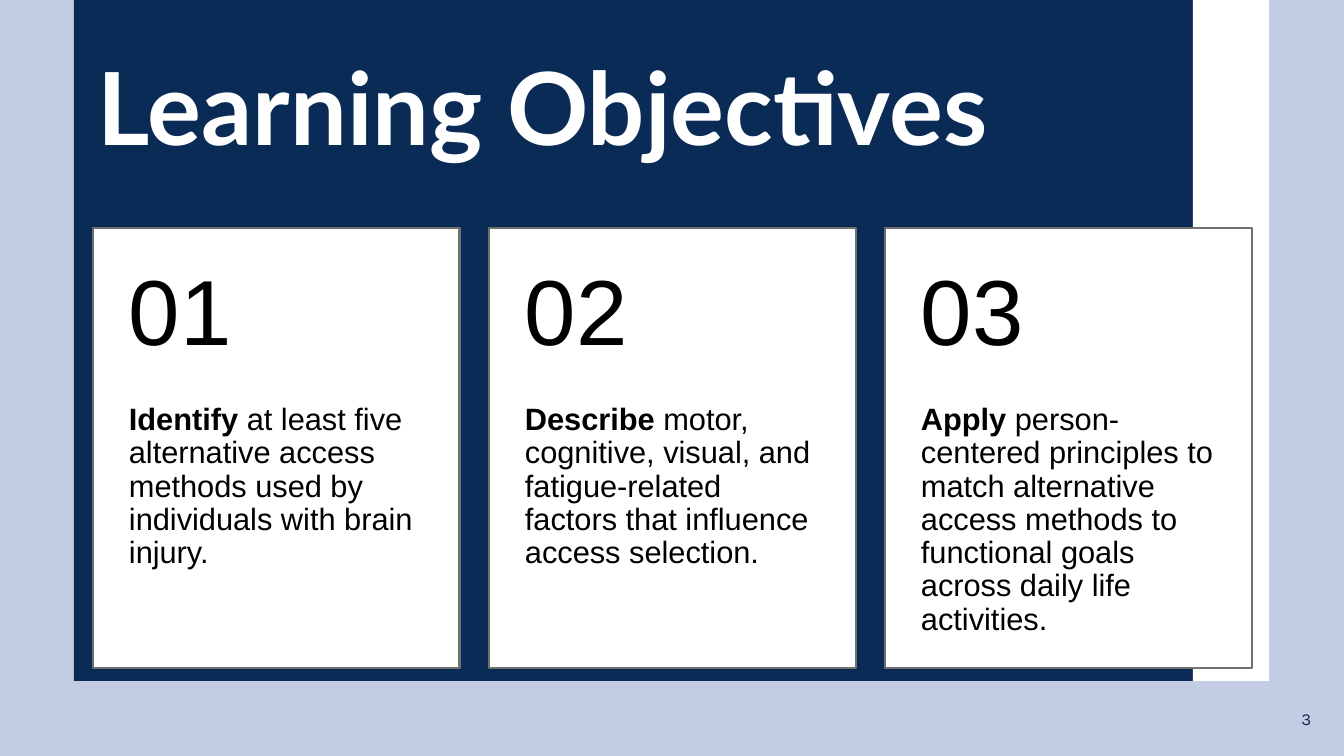
from pptx import Presentation
from pptx.dml.color import RGBColor
from pptx.enum.shapes import MSO_SHAPE as SHAPE
from pptx.enum.text import MSO_ANCHOR as ANCHOR, MSO_AUTO_SIZE as AUTO, PP_ALIGN as ALIGN
from pptx.util import Pt

PX = 914400 / 100.8
COLORS = {"sky": "C2CDE3", "navy": "0B2B57", "white": "FFFFFF", "gray": "707070", "black": "000000"}
CARDS = [
    ("Identify", " at least five alternative access methods used by individuals with brain injury."),
    ("Describe", " motor, cognitive, visual, and fatigue-related factors that influence access selection."),
    ("Apply", " person-centered principles to match alternative access methods to functional goals across daily life activities."),
]
LEFT, TOP, WIDTH, HEIGHT, PITCH = 93, 228, 367, 440, 396
NUMBER_H = 176


def add_rect(shapes, box, color, border=None):
    sp = shapes.add_shape(SHAPE.RECTANGLE, *[round(v * PX) for v in box])
    sp.shadow.inherit = False
    sp.fill.solid()
    sp.fill.fore_color.rgb = RGBColor.from_string(COLORS[color])
    if border:
        sp.line.color.rgb = RGBColor.from_string(COLORS[border])
        sp.line.width = Pt(2)
    else:
        sp.line.fill.background()


def set_text(sp, box, runs, size, font, color, margins, anchor, align=ALIGN.LEFT, spacing=0.9, wrap=True):
    sp.left, sp.top, sp.width, sp.height = [round(v * PX) for v in box]
    tf = sp.text_frame
    frame = {"word_wrap": wrap, "auto_size": AUTO.NONE, "vertical_anchor": anchor}
    for side, margin in zip(("left", "top", "right", "bottom"), margins):
        frame[f"margin_{side}"] = round(margin * PX)
    for name, value in frame.items():
        setattr(tf, name, value)
    p = tf.paragraphs[0]
    p.alignment = align
    p.line_spacing = spacing
    for text, bold in runs:
        r = p.add_run()
        r.text = text
        for name, value in {"size": Pt(size), "name": font, "bold": bold}.items():
            setattr(r.font, name, value)
        r.font.color.rgb = RGBColor.from_string(COLORS[color])


prs = Presentation()
prs.slide_width = round(1344 * PX)
prs.slide_height = round(756 * PX)
s = prs.slides.add_slide(prs.slide_layouts[5])
s.background.fill.solid()
s.background.fill.fore_color.rgb = RGBColor.from_string(COLORS["sky"])

add_rect(s.shapes, (74, 0, 1195, 681), "navy")
add_rect(s.shapes, (1193, 0, 76, 681), "white")

number = s.shapes.add_textbox(0, 0, 0, 0)
set_text(number, (1290, 702, 33, 34), [("3", False)], 12, "Karla", "navy",
         (7, 7, 7, 7), ANCHOR.MIDDLE, ALIGN.CENTER, 1.0, False)

title = s.shapes.title
title.element.getparent().append(title.element)
set_text(title, (LEFT, 40, 1159, 146), [("Learning Objectives", True)], 72, "Lato", "white",
         (5, 5, 5, 5), ANCHOR.MIDDLE)

for i, (verb, rest) in enumerate(CARDS):
    x = LEFT + i * PITCH
    card = s.shapes.add_group_shape()
    add_rect(card.shapes, (x, TOP, WIDTH, HEIGHT), "white", "gray")
    body = card.shapes.add_textbox(0, 0, 0, 0)
    set_text(body, (x, TOP + NUMBER_H, WIDTH, HEIGHT - NUMBER_H), [(verb, True), (rest, False)],
             22, "Arial", "black", (36, 0, 36, 36), ANCHOR.TOP)
    heading = card.shapes.add_textbox(0, 0, 0, 0)
    set_text(heading, (x, TOP, WIDTH, NUMBER_H), [(f"{i + 1:02}", False)],
             66, "Arial", "black", (36, 18, 36, 18), ANCHOR.MIDDLE)
    card.left, card.top, card.width, card.height = [round(v * PX) for v in (x, TOP, WIDTH, HEIGHT)]
    xfrm = card.element.grpSpPr.xfrm
    for child, parent in ((xfrm.chOff, xfrm.off), (xfrm.chExt, xfrm.ext)):
        for key, value in parent.attrib.items():
            child.set(key, value)

prs.save("out.pptx")
